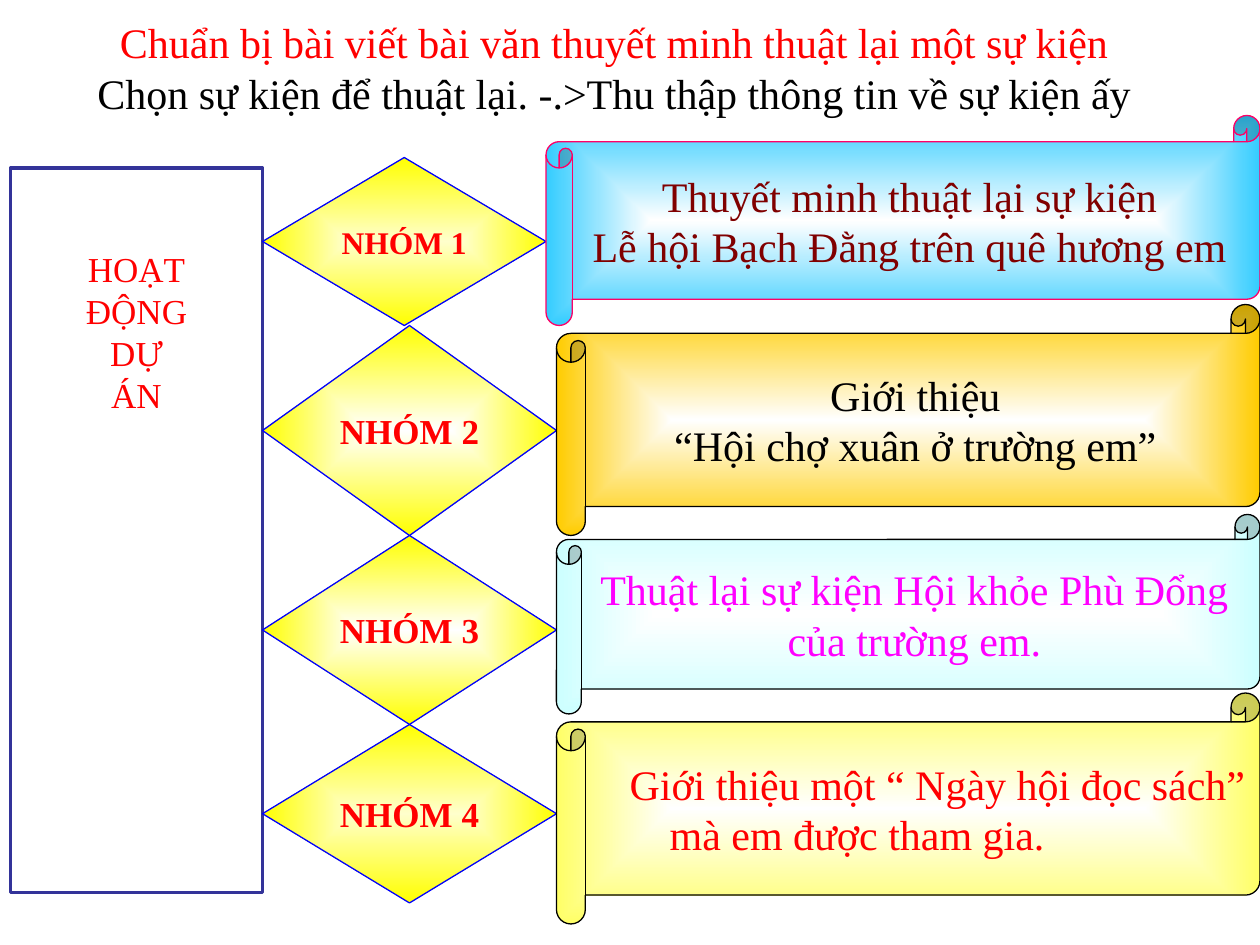
from dataclasses import dataclass
from lxml import etree
from pptx import Presentation
from pptx.dml.color import RGBColor
from pptx.enum import shapes, text
from pptx.oxml import ns
from pptx.util import Inches, Pt

COLS, ROWS = 120, 90
FONT = "Times New Roman"
RED, BLACK, WHITE, CREAM = "FF0000", "000000", "FFFFFF", "FFFFCC"
SHAPE, ALIGN = shapes.MSO_SHAPE, text.PP_ALIGN

prs = Presentation()
prs.slide_width, prs.slide_height = Inches(10), Inches(7.5)
s = prs.slides.add_slide(prs.slide_layouts[6])


@dataclass
class Line:
    words: str
    color: str = RED
    align: ALIGN = ALIGN.CENTER
    indent: float = 0


@dataclass
class Group:
    diamond_row: int
    diamond_rows: int
    diamond_cols: int
    center: str
    label_size: int
    scroll_row: int
    scroll_rows: int
    scroll_fill: str
    scroll_line: str
    lines: list[Line]


def rgb(value: str) -> RGBColor:
    return RGBColor.from_string(value)


def cells(col: int, row: int, cols: int, rows: int) -> list[int]:
    w, h = prs.slide_width / COLS, prs.slide_height / ROWS
    return [round(n) for n in (col * w, row * h, cols * w, rows * h)]


def write(sp, lines: list[Line], size: int, bold: bool = False,
          wrap: bool = True, inset: float = 0,
          anchor=text.MSO_ANCHOR.MIDDLE) -> None:
    tf = sp.text_frame
    tf.word_wrap, tf.vertical_anchor = wrap, anchor
    tf.margin_left = tf.margin_right = Inches(inset)
    for i, line in enumerate(lines):
        p = tf.paragraphs[0] if i == 0 else tf.add_paragraph()
        p.alignment = line.align
        if line.indent:
            p._p.get_or_add_pPr().set("marL", str(Inches(line.indent)))
        r = p.add_run()
        r.text = line.words
        r.font.name, r.font.size, r.font.bold = FONT, Pt(size), bold
        r.font.color.rgb = rgb(line.color)


def add_shape(kind, box: tuple, line: str, width: float = 0.75):
    sp = s.shapes.add_shape(kind, *cells(*box))
    sp.shadow.inherit = False
    sp.line.color.rgb, sp.line.width = rgb(line), Pt(width)
    return sp


def glow(sp, center: str, edge: str, path: str) -> None:
    sp.fill.gradient()
    for stop, color in zip(sp.fill.gradient_stops, (center, edge)):
        stop.color.rgb = rgb(color)
    grad = sp._element.spPr.find(ns.qn("a:gradFill"))
    grad.remove(grad.find(ns.qn("a:lin")))
    node = etree.SubElement(grad, ns.qn("a:path"), path=path)
    etree.SubElement(node, ns.qn("a:fillToRect"),
                     {side: "50000" for side in "ltrb"})


def add_diamond(group: Group, number: int) -> None:
    sp = add_shape(SHAPE.FLOWCHART_DECISION,
                   (25, group.diamond_row, group.diamond_cols, group.diamond_rows), "0000FF")
    glow(sp, group.center, "FFFF00", "shape")
    write(sp, [Line(f"NHÓM {number}")], group.label_size, bold=True, wrap=False)


def add_scroll(group: Group) -> None:
    col = 25 + group.diamond_cols
    sp = add_shape(SHAPE.HORIZONTAL_SCROLL,
                   (col, group.scroll_row, COLS - col, group.scroll_rows), group.scroll_line)
    glow(sp, WHITE, group.scroll_fill, "rect")
    write(sp, group.lines, 24)


def add_text(box: tuple, lines: list[Line], size: int, wrap: bool) -> None:
    sp = s.shapes.add_textbox(*cells(*box))
    write(sp, lines, size, wrap=wrap, inset=0.1, anchor=text.MSO_ANCHOR.TOP)


GROUPS = [
    Group(15, 16, 27, CREAM, 18, 11, 20, "33CCFF", "FF0066",
          [Line("Thuyết minh thuật lại sự kiện", "800000"),
           Line("Lễ hội Bạch Đằng trên quê hương em", "800000")]),
    Group(31, 20, 28, WHITE, 20, 29, 22, "FFCC00", BLACK,
          [Line("Giới thiệu", BLACK), Line("“Hội chợ xuân ở trường em”", BLACK)]),
    Group(51, 18, 28, WHITE, 20, 49, 19, "CCFFFF", BLACK,
          [Line("Thuật lại sự kiện Hội khỏe Phù Đổng", "FF00FF"),
           Line("của trường em.", "FF00FF")]),
    Group(69, 17, 28, CREAM, 20, 66, 22, "FFFF66", BLACK,
          [Line("Giới thiệu một “ Ngày hội đọc sách”", align=ALIGN.RIGHT),
           Line("mà em được tham gia.", align=ALIGN.LEFT, indent=0.67)]),
]

panel = add_shape(SHAPE.FLOWCHART_PROCESS, (1, 16, 24, 69), "333399", 2)
panel.fill.solid()
panel.fill.fore_color.rgb = rgb(WHITE)
add_text((3, 23, 20, 55), [Line(word) for word in ("HOẠT", "ĐỘNG", "DỰ", "ÁN")], 20, False)
for number, group in enumerate(GROUPS, 1):
    add_diamond(group, number)
for group in GROUPS:
    add_scroll(group)
add_text((3, 1, 111, 11),
         [Line("Chuẩn bị bài viết bài văn thuyết minh thuật lại một sự kiện"),
          Line("Chọn sự kiện để thuật lại. -.>Thu thập thông tin về sự kiện ấy", BLACK)], 24, True)

prs.save("out.pptx")
